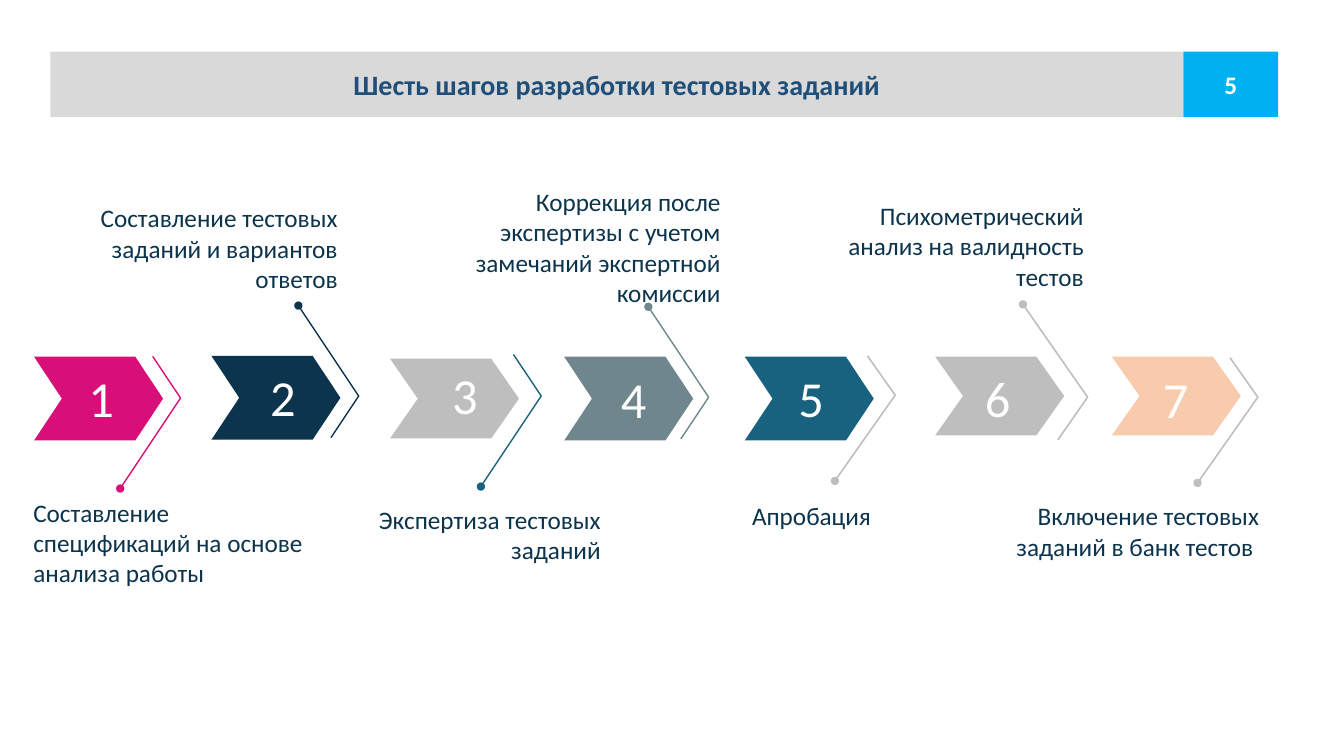
"""Builds a slide with the steps of developing test items as a row of chevrons."""
from lxml import etree
from pptx import Presentation
from pptx.dml.color import RGBColor
from pptx.enum.shapes import MSO_SHAPE
from pptx.enum.text import MSO_ANCHOR, PP_ALIGN
from pptx.oxml.ns import qn
from pptx.util import Cm, Pt

RECTANGLE, CHEVRON = MSO_SHAPE.RECTANGLE, MSO_SHAPE.CHEVRON
LEFT, CENTER, RIGHT = PP_ALIGN.LEFT, PP_ALIGN.CENTER, PP_ALIGN.RIGHT
TOP, MIDDLE = MSO_ANCHOR.TOP, MSO_ANCHOR.MIDDLE

FONT = "Calibri"
NAVY, WHITE, GRAY = "0C344C", "FFFFFF", "BFBEBE"
TITLE = "Шесть шагов разработки тестовых заданий"
PAGE = "5"
BAR_TOP, BAR_HEIGHT = 1.3, 1.65
TITLE_LEFT, TITLE_WIDTH, PAGE_WIDTH = 1.27, 28.55, 2.39

CHEVRON_WIDTH, NOTCH = 3.25, 0.7
NUMBER_WIDTH, NUMBER_HEIGHT = 1.96, 1.8
START_SHARE = 0.46

STEPS = [
    {"text": "Составление спецификаций на основе анализа работы", "align": LEFT,
     "label": (0.84, 12.52, 6.83, 2.31), "chevron": (0.86, 8.99, 2.11), "fill": "D80F79",
     "number": (1.57, 9.12), "tip": (4.55, 10.03), "reach": (1.52, 2.28), "line": ("D80F79", 1)},
    {"text": "Составление тестовых заданий и вариантов ответов", "align": RIGHT,
     "label": (2.21, 5.11, 6.3, 2.31), "chevron": (5.33, 8.97, 2.11), "fill": NAVY,
     "number": (6.15, 9.09), "tip": (9.04, 9.98), "reach": (1.52, 2.28), "line": (NAVY, 1)},
    {"text": "Экспертиза тестовых заданий", "align": RIGHT,
     "label": (7.82, 12.7, 7.32, 1.52), "chevron": (9.83, 9.04, 2.01), "fill": GRAY,
     "number": (10.74, 9.04), "tip": (13.64, 9.98), "reach": (1.52, 2.28), "line": ("19627F", 1)},
    {"text": "Коррекция после экспертизы с учетом замечаний экспертной комиссии", "align": RIGHT,
     "label": (10.69, 4.7, 7.47, 3.07), "chevron": (14.22, 8.99, 2.11), "fill": "6F878C",
     "number": (14.99, 9.14), "tip": (17.86, 10.01), "reach": (1.52, 2.28), "line": ("6F878C", 1)},
    {"text": "Апробация", "align": RIGHT,
     "label": (17.53, 12.62, 4.42, 0.76), "chevron": (18.77, 8.99, 2.11), "fill": "19627F",
     "number": (19.46, 9.12), "tip": (22.56, 9.96), "reach": (1.52, 2.16), "line": (GRAY, 1.13)},
    {"text": "Психометрический анализ на валидность тестов", "align": RIGHT,
     "label": (21.01, 5.05, 6.3, 2.31), "chevron": (23.57, 8.99, 1.98), "fill": GRAY,
     "number": (24.16, 9.12), "tip": (27.41, 10.01), "reach": (1.63, 2.34), "line": (GRAY, 1.13)},
    {"text": "Включение тестовых заданий в банк тестов ", "align": RIGHT,
     "label": (25.43, 12.62, 6.3, 1.55), "chevron": (28.02, 8.99, 1.98), "fill": "F8CBAD",
     "number": (28.65, 9.14), "tip": (31.7, 10.01), "reach": (1.52, 2.16), "line": (GRAY, 1.13)},
]


def color(value):
    return RGBColor.from_string(value)


def write(shape, text, size=18, fill=NAVY, bold=False, align=LEFT, anchor=TOP, inset=None):
    frame = shape.text_frame
    frame.word_wrap = True
    frame.vertical_anchor = anchor
    if inset is not None:
        frame.margin_left = frame.margin_right = Cm(inset)
        frame.margin_top = frame.margin_bottom = Cm(inset)
    paragraph = frame.paragraphs[0]
    paragraph.alignment = align
    run = paragraph.add_run()
    run.text = text
    run.font.name = FONT
    run.font.size = Pt(size)
    run.font.bold = bold
    run.font.color.rgb = color(fill)


def add_block(slide, kind, box, fill):
    shape = slide.shapes.add_shape(kind, *map(Cm, box))
    shape.shadow.inherit = False
    shape.fill.solid()
    shape.fill.fore_color.rgb = color(fill)
    shape.line.fill.background()
    return shape


def add_text(slide, box, text, **formatting):
    write(slide.shapes.add_textbox(*map(Cm, box)), text, **formatting)


def add_pointer(slide, tip, reach, direction, line):
    tip_x, tip_y = tip
    run, rise = reach[0], reach[1] * direction
    start = (tip_x - run * START_SHARE, tip_y - rise * START_SHARE)
    dot = (tip_x - run, tip_y + rise)
    points = [(Cm(x), Cm(y)) for x, y in (start, tip, dot)]
    builder = slide.shapes.build_freeform(*points[0])
    builder.add_line_segments(points[1:], close=False)
    pointer = builder.convert_to_shape()
    pointer.shadow.inherit = False
    pointer.fill.background()
    pointer.line.color.rgb = color(line[0])
    pointer.line.width = Pt(line[1])
    outline = pointer.element.spPr.find(qn("a:ln"))
    etree.SubElement(outline, qn("a:tailEnd"), type="oval")


def add_step(slide, number, step):
    left, top, height = step["chevron"]
    chevron = add_block(slide, CHEVRON, (left, top, CHEVRON_WIDTH, height), step["fill"])
    chevron.adjustments[0] = NOTCH / height
    direction = 1 if number % 2 else -1
    add_pointer(slide, step["tip"], step["reach"], direction, step["line"])
    add_text(slide, (*step["number"], NUMBER_WIDTH, NUMBER_HEIGHT), str(number),
             size=36, fill=WHITE, align=CENTER)
    add_text(slide, step["label"], step["text"], align=step["align"], inset=0)


def main():
    presentation = Presentation()
    presentation.slide_width, presentation.slide_height = Cm(33.87), Cm(19.05)
    slide = presentation.slides.add_slide(presentation.slide_layouts[6])
    title = add_block(slide, RECTANGLE, (TITLE_LEFT, BAR_TOP, TITLE_WIDTH, BAR_HEIGHT), "D9D9D9")
    write(title, TITLE, size=20, fill="1F4E79", bold=True, align=CENTER, anchor=MIDDLE)
    page_box = (TITLE_LEFT + TITLE_WIDTH, BAR_TOP, PAGE_WIDTH, BAR_HEIGHT)
    page = add_block(slide, RECTANGLE, page_box, "00B0F0")
    write(page, PAGE, fill=WHITE, bold=True, align=CENTER, anchor=MIDDLE)
    for number, step in enumerate(STEPS, 1):
        add_step(slide, number, step)
    presentation.save("out.pptx")


if __name__ == "__main__":
    main()
